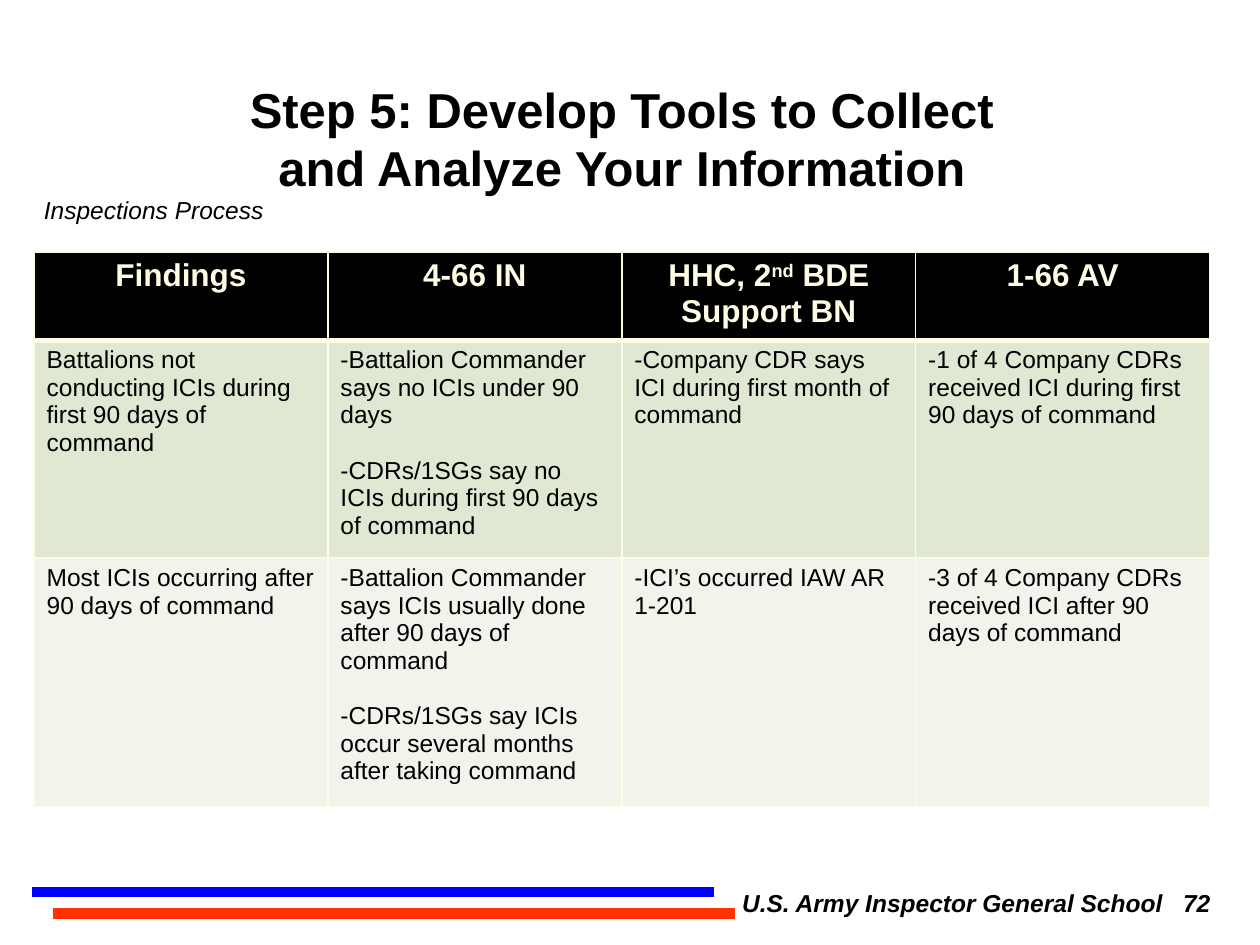
from dataclasses import dataclass

from lxml import etree
from pptx import Presentation
from pptx.dml.color import RGBColor
from pptx.enum.shapes import MSO_CONNECTOR
from pptx.enum.text import MSO_ANCHOR, MSO_AUTO_SIZE, PP_ALIGN
from pptx.oxml.ns import qn
from pptx.util import Inches, Pt

STRAIGHT = MSO_CONNECTOR.STRAIGHT
CENTER, LEFT = PP_ALIGN.CENTER, PP_ALIGN.LEFT
TOP, MIDDLE = MSO_ANCHOR.TOP, MSO_ANCHOR.MIDDLE
NO_AUTOFIT = MSO_AUTO_SIZE.NONE

FONT = "Arial"
WIDTH, HEIGHT = 10, 7.5
COLORS = {
    "text": "000000",
    "cream": "FEFDE3",
    "header": "000000",
    "band_dark": "E0E8D4",
    "band_light": "F0F4EB",
    "blue": "0000FF",
    "red": "FF3300",
}

COLUMN_WIDTH = 9.33 / 4
TABLE_LEFT, TABLE_TOP = 0.27, 2
BODY_SIZE, HEADER_SIZE = 14, 18
FINDING_GAP = 16


@dataclass
class Stripe:
    left: float
    right: float
    y: float
    color: str


@dataclass
class Row:
    height: float
    fill: str
    cells: list[list[str]]


STRIPES = [
    Stripe(0.25, 5.67, 7.08, "blue"),
    Stripe(0.42, 5.83, 7.25, "red"),
]

ROWS = [
    Row(0.7, "header", [["Findings"], ["4-66 IN"],
                        ["HHC, 2nd BDE Support BN"], ["1-66 AV"]]),
    Row(1.73, "band_dark", [
        ["Battalions not conducting ICIs during first 90 days of command"],
        ["-Battalion Commander says no ICIs under 90 days",
         "-CDRs/1SGs say no ICIs during first 90 days of command"],
        ["-Company CDR says ICI during first month of command"],
        ["-1 of 4 Company CDRs received ICI during first 90 days of command"],
    ]),
    Row(1.97, "band_light", [
        ["Most ICIs occurring after 90 days of command"],
        ["-Battalion Commander says ICIs usually done after 90 days of command",
         "-CDRs/1SGs say ICIs occur several months after taking command"],
        ["-ICI’s occurred IAW AR 1-201"],
        ["-3 of 4 Company CDRs received ICI after 90 days of command"],
    ]),
]


def rgb(name: str) -> RGBColor:
    return RGBColor.from_string(COLORS[name])


def style(paragraph, size: float, color: str = "text", bold: bool = False,
          italic: bool = False, align=LEFT) -> None:
    paragraph.alignment = align
    for run in paragraph.runs:
        run.font.name = FONT
        run.font.size = Pt(size)
        run.font.bold = bold
        run.font.italic = italic
        run.font.color.rgb = rgb(color)


def add_stripe(slide, stripe: Stripe) -> None:
    line = slide.shapes.add_connector(
        STRAIGHT, Inches(stripe.left), Inches(stripe.y),
        Inches(stripe.right), Inches(stripe.y))
    line.line.color.rgb = rgb(stripe.color)
    line.line.width = Pt(6)
    etree.SubElement(line._element.spPr, qn("a:effectLst"))


def add_label(slide, text: str, left: float, top: float, bold: bool = False):
    label = slide.shapes.add_textbox(
        Inches(left), Inches(top), Inches(4.5), Inches(0.5))
    label.text_frame.word_wrap = True
    label.text_frame.text = text
    style(label.text_frame.paragraphs[0], 14, bold=bold, italic=True)
    return label


def add_title(slide) -> None:
    title = slide.shapes.title
    title.left, title.top = Inches(1.75), Inches(0.58)
    title.width, title.height = Inches(6.37), Inches(1.03)
    frame = title.text_frame
    frame.text = "Step 5: Develop Tools to Collect and Analyze Your Information"
    frame.word_wrap = True
    frame.auto_size = NO_AUTOFIT
    frame.vertical_anchor = MIDDLE
    style(frame.paragraphs[0], 28, bold=True, align=CENTER)


def add_footer(slide) -> None:
    """Put the school name and, at a tab stop, the page number."""
    footer = add_label(slide, "U.S. Army Inspector General School\t72",
                       5.5, 7, bold=True)
    footer.text_frame.margin_left = Inches(0.39)
    properties = footer.text_frame.paragraphs[0]._p.get_or_add_pPr()
    tabs = etree.SubElement(properties, qn("a:tabLst"))
    etree.SubElement(tabs, qn("a:tab"), pos=str(Inches(3.5)), algn="l")


def set_borders(cell, top: float, bottom: float) -> None:
    properties = cell._tc.get_or_add_tcPr()
    widths = {"lnL": 1, "lnR": 1, "lnT": top, "lnB": bottom}
    for position, (side, width) in enumerate(widths.items()):
        border = etree.Element(qn(f"a:{side}"), w=str(Pt(width)))
        fill = etree.SubElement(border, qn("a:solidFill"))
        etree.SubElement(fill, qn("a:srgbClr"), val=COLORS["cream"])
        properties.insert(position, border)


def raise_ordinal(paragraph, ordinal: str) -> None:
    """Split the paragraph so that the ordinal ending is superscript."""
    before, after = paragraph.text.split(ordinal)
    paragraph.text = before
    raised = paragraph.add_run()
    raised.text = ordinal
    raised.font._element.set("baseline", "30000")
    paragraph.add_run().text = after


def fill_cell(cell, findings: list[str], row: Row, is_header: bool) -> None:
    cell.fill.solid()
    cell.fill.fore_color.rgb = rgb(row.fill)
    cell.vertical_anchor = TOP
    cell.text_frame.text = "\n".join(findings)
    for number, paragraph in enumerate(cell.text_frame.paragraphs):
        if is_header:
            if "2nd" in paragraph.text:
                raise_ordinal(paragraph, "nd")
            style(paragraph, HEADER_SIZE, "cream", bold=True, align=CENTER)
        else:
            style(paragraph, BODY_SIZE)
        if number:
            paragraph.space_before = Pt(FINDING_GAP)


def add_findings_table(slide) -> None:
    columns = len(ROWS[0].cells)
    table = slide.shapes.add_table(
        len(ROWS), columns, Inches(TABLE_LEFT), Inches(TABLE_TOP),
        Inches(COLUMN_WIDTH * columns),
        Inches(sum(row.height for row in ROWS))).table
    for column in table.columns:
        column.width = Inches(COLUMN_WIDTH)
    for r, row in enumerate(ROWS):
        table.rows[r].height = Inches(row.height)
        for c, findings in enumerate(row.cells):
            cell = table.cell(r, c)
            fill_cell(cell, findings, row, is_header=r == 0)
            set_borders(cell, top=3 if r == 1 else 1, bottom=3 if r == 0 else 1)


def main() -> None:
    presentation = Presentation()
    presentation.slide_width = Inches(WIDTH)
    presentation.slide_height = Inches(HEIGHT)
    slide = presentation.slides.add_slide(presentation.slide_layouts[5])
    for stripe in STRIPES:
        add_stripe(slide, stripe)
    add_label(slide, "Inspections Process", 0.25, 1.5)
    add_footer(slide)
    add_title(slide)
    add_findings_table(slide)
    presentation.save("out.pptx")


if __name__ == "__main__":
    main()
